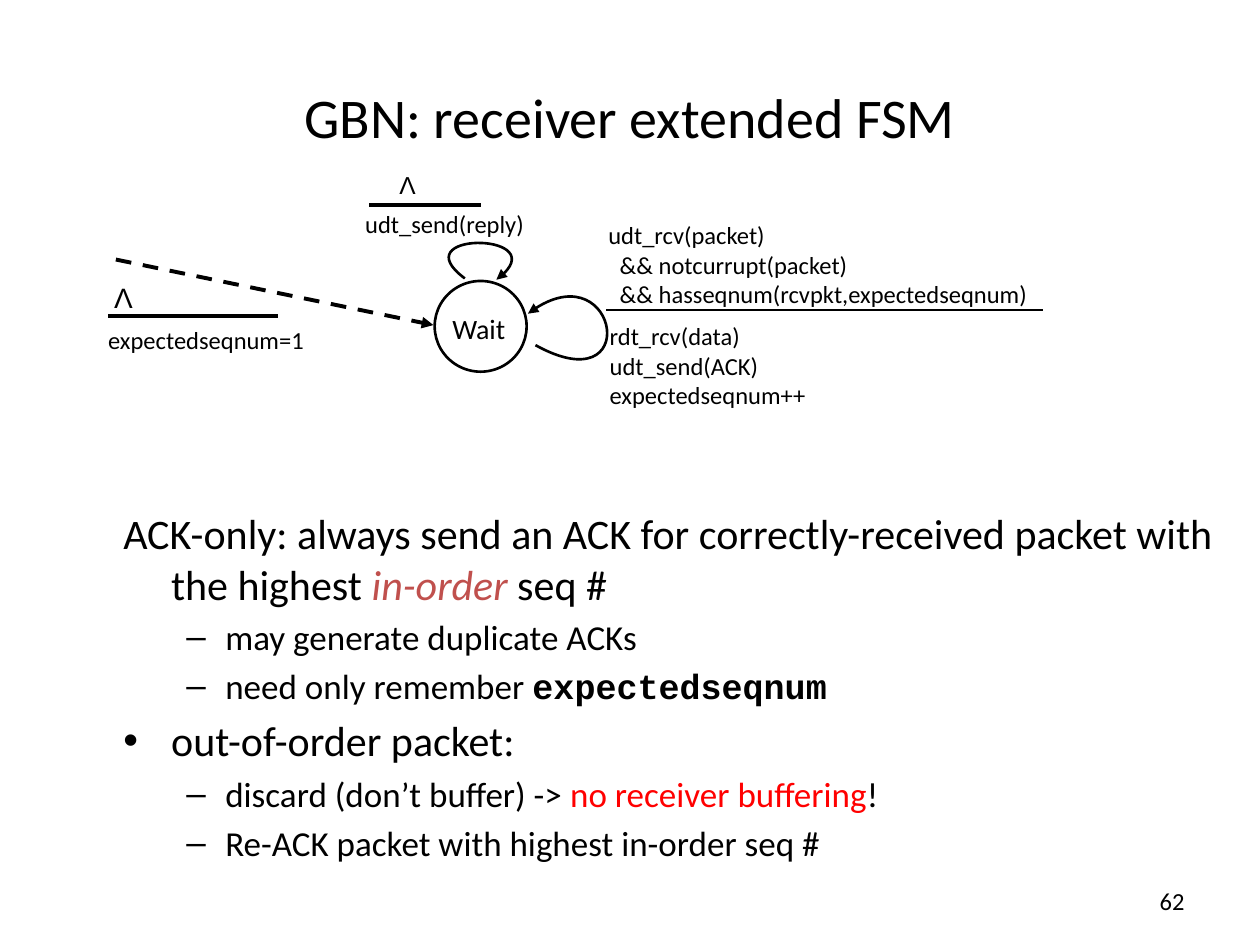
from dataclasses import dataclass

from lxml import etree
from pptx import Presentation
from pptx import util as u
from pptx.dml.color import RGBColor
from pptx.enum import dml, shapes, text
from pptx.oxml.ns import qn

ALIGN = text.PP_ALIGN


@dataclass(frozen=True)
class Theme:
    ink: str = "000000"
    paper: str = "FFFFFF"
    accent: str = "C0504D"
    alert: str = "FF0000"
    body_font: str = "Calibri"
    symbol_font: str = "Arial"
    code_font: str = "Courier New"
    title_size: int = 32
    point_size: int = 24
    subpoint_size: int = 20
    state_size: int = 16
    label_size: int = 14
    thin: float = 1.5
    thick: float = 2.25


class FsmSlide:
    def __init__(self, slide, theme):
        self.shapes = slide.shapes
        self.theme = theme

    def add_run(self, paragraph, words, **style):
        run = paragraph.add_run()
        run.text = words
        color = style.pop("color", self.theme.ink)
        run.font.color.rgb = RGBColor.from_string(color)
        for name, value in {"name": self.theme.body_font, **style}.items():
            setattr(run.font, name, value)

    def frame(self, box, anchor=text.MSO_ANCHOR.TOP, wrap=True):
        frame = self.shapes.add_textbox(*map(u.Inches, box)).text_frame
        settings = {"word_wrap": wrap, "vertical_anchor": anchor}
        if not wrap:
            settings["auto_size"] = text.MSO_AUTO_SIZE.SHAPE_TO_FIT_TEXT
        for name, value in settings.items():
            setattr(frame, name, value)
        return frame

    def label(self, box, lines, size=None, align=ALIGN.LEFT, font=None, **layout):
        """Write one paragraph per line; lines opening with && are indented."""
        frame = self.frame(box, **layout)
        for i, line in enumerate(lines):
            paragraph = frame.add_paragraph() if i else frame.paragraphs[0]
            paragraph.alignment = align
            if line.startswith("&&"):
                paragraph._p.get_or_add_pPr().set("marL", str(u.Inches(0.09)))
            self.add_run(paragraph, line, size=u.Pt(size or self.theme.label_size),
                         name=font or self.theme.body_font)

    def outline(self, box, points):
        """Write (level, bullet, runs) points with hanging indents."""
        frame = self.frame(box)
        levels = [(0.38, -0.38, self.theme.point_size),
                  (0.81, -0.31, self.theme.subpoint_size)]
        for i, (level, bullet, runs) in enumerate(points):
            paragraph = frame.add_paragraph() if i else frame.paragraphs[0]
            paragraph.level = level
            margin, indent, size = levels[level]
            props = paragraph._p.get_or_add_pPr()
            props.set("marL", str(u.Inches(margin)))
            props.set("indent", str(u.Inches(indent)))
            before = etree.SubElement(props, qn("a:spcBef"))
            etree.SubElement(before, qn("a:spcPct")).set("val", "20000")
            if bullet:
                etree.SubElement(props, qn("a:buFont")).set("typeface", self.theme.symbol_font)
                etree.SubElement(props, qn("a:buChar")).set("char", bullet)
            else:
                etree.SubElement(props, qn("a:buNone"))
            for words, style in runs:
                self.add_run(paragraph, words, size=u.Pt(size), **style)

    def stroke(self, line, width, arrow=False):
        line.color.rgb = RGBColor.from_string(self.theme.ink)
        line.width = u.Pt(width)
        if arrow:
            etree.SubElement(line._get_or_add_ln(), qn("a:tailEnd")).set("type", "triangle")

    def state(self, box):
        circle = self.shapes.add_shape(shapes.MSO_SHAPE.OVAL, *map(u.Inches, box))
        circle.shadow.inherit = False
        circle.fill.solid()
        circle.fill.fore_color.rgb = RGBColor.from_string(self.theme.paper)
        self.stroke(circle.line, self.theme.thin)

    def line(self, start, end, width, dashed_arrow=False):
        connector = self.shapes.add_connector(
            shapes.MSO_CONNECTOR.STRAIGHT, *map(u.Inches, (*start, *end)))
        if dashed_arrow:
            connector.line.dash_style = dml.MSO_LINE.DASH
        self.stroke(connector.line, width, dashed_arrow)
        etree.SubElement(connector._element.spPr, qn("a:effectLst"))

    def loop(self, *points):
        """Draw a cubic Bezier arrow: a three-leg path whose legs become one curve."""
        start, *rest = [(u.Inches(x), u.Inches(y)) for x, y in points]
        builder = self.shapes.build_freeform(*start)
        builder.add_line_segments(rest, close=False)
        arc = builder.convert_to_shape()
        arc.shadow.inherit = False
        arc.fill.background()
        self.stroke(arc.line, self.theme.thin, arrow=True)
        path = arc._element.spPr.find(".//" + qn("a:path"))
        legs = path.findall(qn("a:lnTo"))
        curve = etree.SubElement(path, qn("a:cubicBezTo"))
        for leg in legs:
            curve.append(leg[0])
            path.remove(leg)


def main():
    deck = Presentation()
    deck.slide_width, deck.slide_height = u.Inches(10), u.Inches(7.5)
    theme = Theme()
    fsm = FsmSlide(deck.slides.add_slide(deck.slide_layouts[6]), theme)
    middle = text.MSO_ANCHOR.MIDDLE

    fsm.label((7.17, 6.95, 2.33, 0.4), ["62"], align=ALIGN.RIGHT, anchor=middle)
    fsm.label((0.5, 0.3, 9, 1.25), ["GBN: receiver extended FSM"],
              theme.title_size, ALIGN.CENTER, anchor=middle)
    fsm.outline((0.88, 3.98, 8.91, 3.12), [
        (0, None, [
            ("ACK-only: always send an ACK for correctly-received packet with the highest ", {}),
            ("in-order ", {"color": theme.accent, "italic": True}),
            ("seq #", {})]),
        (1, "–", [("may generate duplicate ACKs", {})]),
        (1, "–", [("need only remember ", {}),
                  ("expectedseqnum", {"name": theme.code_font, "bold": True})]),
        (0, "•", [("out-of-order packet:", {})]),
        (1, "–", [("discard (don’t buffer) -> ", {}),
                  ("no receiver buffering", {"color": theme.alert}),
                  ("!", {})]),
        (1, "–", [("Re-ACK packet with highest in-order seq #", {})]),
    ])

    fsm.state((3.45, 2.23, 0.73, 0.72))
    fsm.label((3.36, 2.42, 0.88, 0.26), ["Wait"], theme.state_size, ALIGN.CENTER)

    # Start transition
    fsm.line((0.92, 2.06), (3.44, 2.58), theme.thick, dashed_arrow=True)
    fsm.label((0.8, 2.18, 0.36, 0.37), ["Λ"], theme.state_size, ALIGN.CENTER,
              theme.symbol_font, wrap=False)
    fsm.line((0.86, 2.51), (2.21, 2.51), theme.thick)
    fsm.label((0.76, 2.53, 3.98, 1.07), ["expectedseqnum=1"])

    # Default transition
    fsm.label((2.84, 1.3, 0.79, 0.27), ["Λ"], align=ALIGN.CENTER, font=theme.symbol_font)
    fsm.line((2.93, 1.63), (3.82, 1.63), theme.thick)
    fsm.label((2.8, 1.61, 1.77, 0.34), ["udt_send(reply)"])
    fsm.loop((3.69, 2.21), (3.19, 1.84), (4.45, 1.84), (3.94, 2.22))

    # In-order packet transition
    fsm.label((4.73, 1.7, 3.9, 0.62), [
        "udt_rcv(packet)", "&& notcurrupt(packet)",
        "&& hasseqnum(rcvpkt,expectedseqnum)"])
    fsm.line((4.81, 2.46), (8.28, 2.46), theme.thin)
    fsm.label((4.74, 2.5, 4.72, 0.94),
              ["rdt_rcv(data)", "udt_send(ACK)", "expectedseqnum++"])
    fsm.loop((4.25, 2.74), (5.1, 3.21), (4.9, 1.95), (4.19, 2.49))

    deck.save("out.pptx")


if __name__ == "__main__":
    main()
